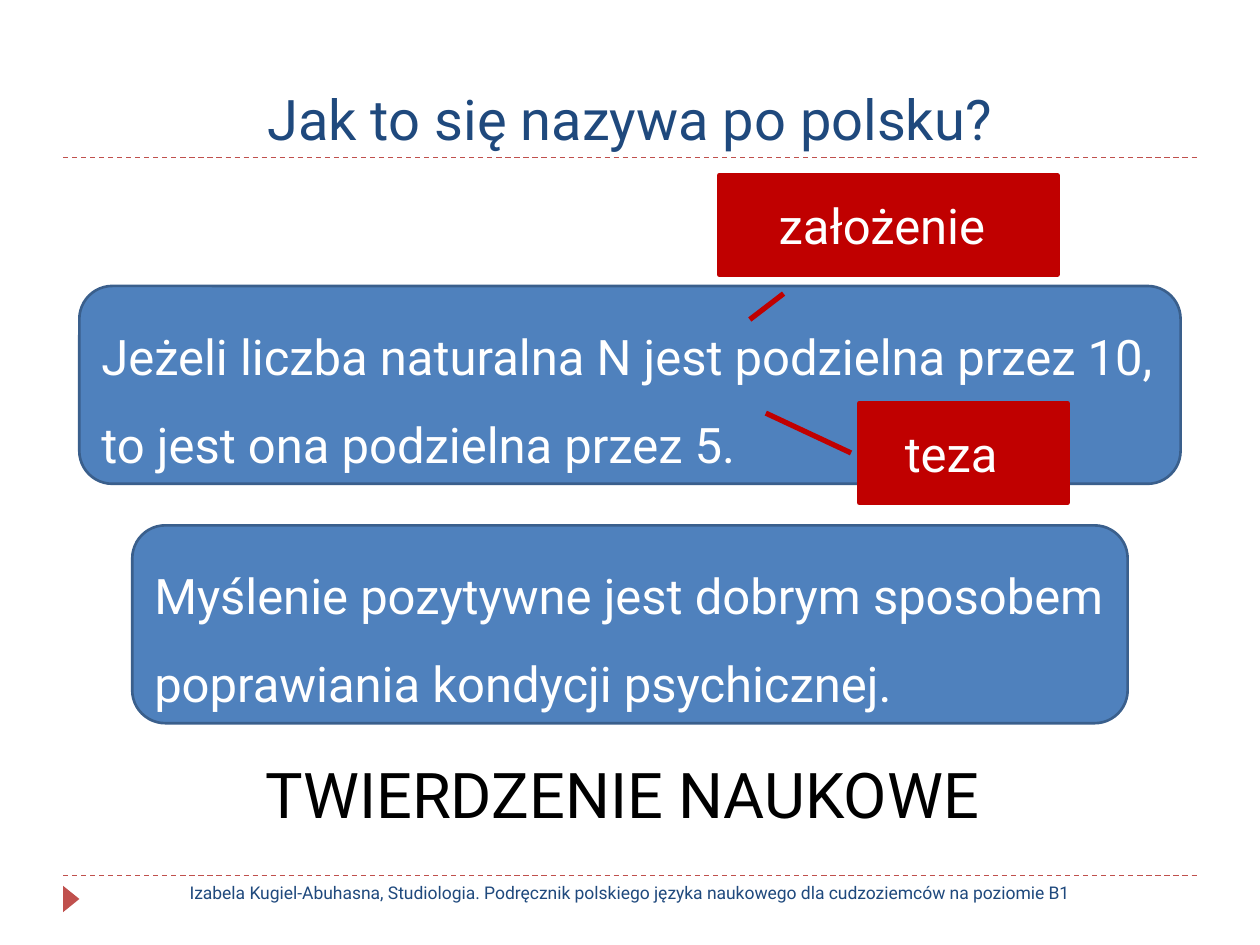
"""Build the slide on naming the parts of a scientific statement in Polish."""
from lxml import etree
from pptx import Presentation
from pptx.dml.color import RGBColor
from pptx.enum.dml import MSO_LINE
from pptx.enum.shapes import MSO_CONNECTOR, MSO_SHAPE
from pptx.enum.text import MSO_ANCHOR, PP_ALIGN
from pptx.oxml.ns import qn
from pptx.util import Inches, Pt

FONT = "Roboto"
NAVY = RGBColor(0x1F, 0x49, 0x7D)
BLUE = RGBColor(0x4F, 0x81, 0xBD)
BLUE_EDGE = RGBColor(0x3A, 0x5F, 0x8C)
BRICK = RGBColor(0xC0, 0x50, 0x4D)
RED = RGBColor(0xC0, 0x00, 0x00)
WHITE = RGBColor(0xFF, 0xFF, 0xFF)
BLACK = RGBColor(0x00, 0x00, 0x00)

LEFT, CENTER = PP_ALIGN.LEFT, PP_ALIGN.CENTER
TOP, MIDDLE, BOTTOM = MSO_ANCHOR.TOP, MSO_ANCHOR.MIDDLE, MSO_ANCHOR.BOTTOM
STRAIGHT, DASH = MSO_CONNECTOR.STRAIGHT, MSO_LINE.DASH
ROUNDED = MSO_SHAPE.ROUNDED_RECTANGLE
CALLOUT = MSO_SHAPE.LINE_CALLOUT_1
TRIANGLE = MSO_SHAPE.ISOSCELES_TRIANGLE


def write(sp, lines, size, color, anchor=TOP, align=CENTER, spacing=None, right=0.1):
    """Fill a shape with one paragraph per line."""
    tf = sp.text_frame
    frame = {"word_wrap": True, "vertical_anchor": anchor, "margin_right": Inches(right)}
    for name, value in frame.items():
        setattr(tf, name, value)
    for i, line in enumerate(lines):
        p = tf.paragraphs[0] if i == 0 else tf.add_paragraph()
        p.alignment = align
        p.line_spacing = spacing
        r = p.add_run()
        r.text = line
        for name, value in {"name": FONT, "size": Pt(size)}.items():
            setattr(r.font, name, value)
        r.font.color.rgb = color


def add_text(s, box, text, size, color, **options):
    """Add a one-line text box."""
    sp = s.shapes.add_textbox(*map(Inches, box))
    write(sp, [text], size, color, **options)


def add_block(s, kind, box, fill, edge=None, width=0):
    """Add a flat filled shape with an optional outline."""
    sp = s.shapes.add_shape(kind, *map(Inches, box))
    sp.shadow.inherit = False
    sp.fill.solid()
    sp.fill.fore_color.rgb = fill
    if edge is None:
        sp.line.fill.background()
    else:
        sp.line.color.rgb = edge
        sp.line.width = Pt(width)
    return sp


def add_rule(s, y):
    """Add a dashed rule across the slide."""
    cx = s.shapes.add_connector(STRAIGHT, Inches(0.5), Inches(y), Inches(9.5), Inches(y))
    cx.line.color.rgb = BRICK
    cx.line.width = Pt(0.75)
    cx.line.dash_style = DASH
    etree.SubElement(cx._element.spPr, qn("a:effectLst"))


def add_statement(s, box, lines):
    """Add a rounded blue box holding an example statement."""
    sp = add_block(s, ROUNDED, box, BLUE, BLUE_EDGE, 1.5)
    write(sp, lines, 28, WHITE, anchor=MIDDLE, align=LEFT, spacing=1.5)


def add_callout(s, box, text, pointer, right):
    """Add a red label whose pointer is given as fractions of its size."""
    sp = add_block(s, CALLOUT, box, RED, RED, 3)
    for i, value in enumerate(pointer):
        sp.adjustments[i] = value
    write(sp, [text], 28, WHITE, anchor=MIDDLE, right=right)


def main():
    """Assemble and save the slide."""
    prs = Presentation()
    prs.slide_width, prs.slide_height = Inches(10), Inches(7.5)
    s = prs.slides.add_slide(prs.slide_layouts[6])

    for y in (6.95, 1.25):
        add_rule(s, y)
    marker = add_block(s, TRIANGLE, (0.46, 7.07, 0.21, 0.13), BRICK)
    marker.rotation = 90

    add_text(s, (0.5, 0.17, 9, 1.08), "Jak to się nazywa po polsku?", 32, NAVY, anchor=BOTTOM)
    add_text(s, (1.06, 6.95, 7.87, 0.4),
             "Izabela Kugiel-Abuhasna, Studiologia. Podręcznik polskiego języka "
             "naukowego dla cudzoziemców na poziomie B1", 10, NAVY)

    add_statement(s, (0.63, 2.27, 8.74, 1.57),
                  ["Jeżeli liczba naturalna N jest podzielna przez 10,",
                   "to jest ona podzielna przez 5."])
    add_text(s, (1.34, 5.95, 7.32, 0.71), "TWIERDZENIE NAUKOWE", 36, BLACK, right=0.22)
    add_callout(s, (5.71, 1.39, 2.68, 0.79), "założenie", (1.19, 0.19, 1.45, 0.09), 0.2)
    add_callout(s, (6.82, 3.2, 1.65, 0.79), "teza", (0.5, -0.04, 0.1, -0.45), 0.29)
    add_statement(s, (1.05, 4.17, 7.9, 1.57),
                  ["Myślenie pozytywne jest dobrym sposobem",
                   "poprawiania kondycji psychicznej."])

    prs.save("out.pptx")


if __name__ == "__main__":
    main()
